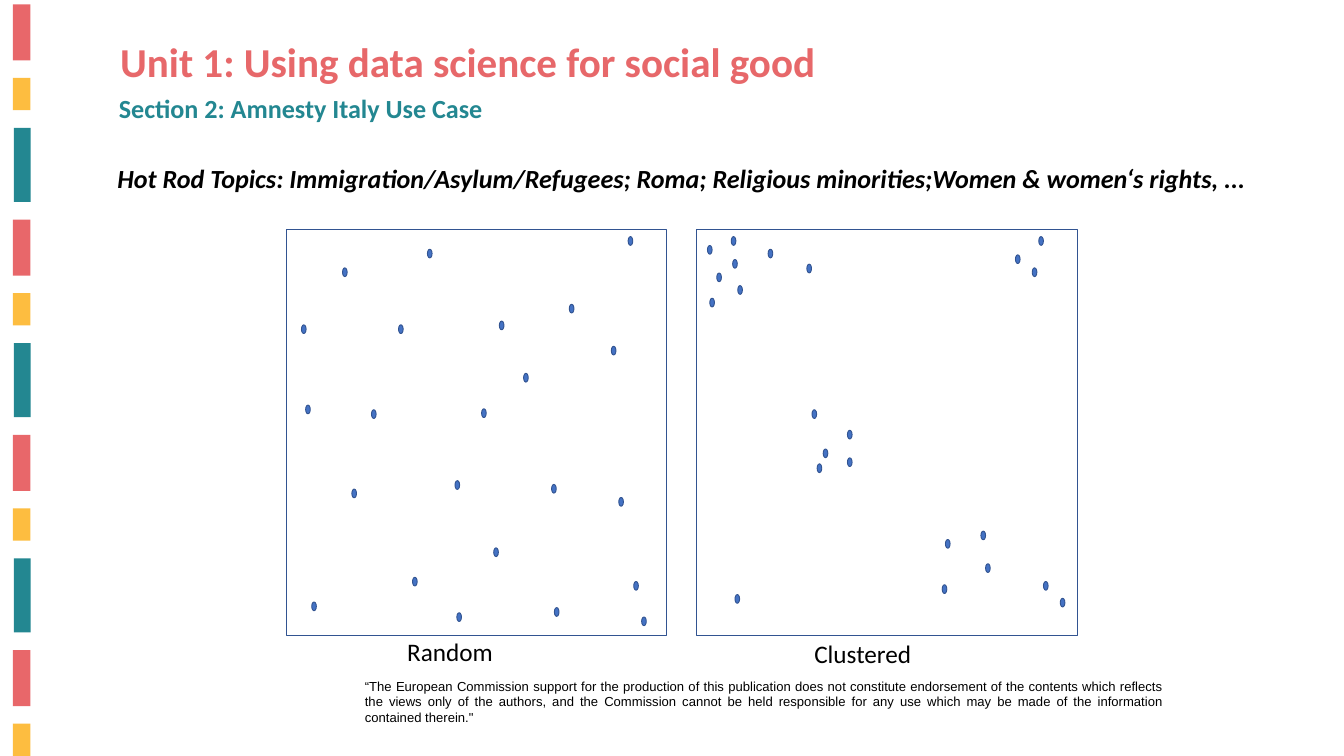
from pptx import Presentation
from pptx.dml.color import RGBColor
from pptx.enum.shapes import MSO_SHAPE as Shape
from pptx.enum.text import MSO_AUTO_SIZE as AutoSize, PP_ALIGN as Align
from pptx.util import Pt

CORAL = RGBColor(0xE8, 0x67, 0x6A)
TITLE_CORAL = RGBColor(0xE7, 0x68, 0x6A)
YELLOW = RGBColor(0xFD, 0xBD, 0x40)
TEAL = RGBColor(0x23, 0x87, 0x91)
BLUE = RGBColor(0x44, 0x72, 0xC4)
NAVY = RGBColor(0x32, 0x54, 0x91)
BLACK = RGBColor(0, 0, 0)

STRIPE_PERIOD = 230.6
STRIPE_COUNT = 11
STRIPES = [(13.8, 4.8, 18.7, 60, CORAL),
           (13.8, 83.6, 18.7, 34.4, YELLOW),
           (14.8, 137, 18.2, 79.4, TEAL)]

RANDOM_DOTS = [
    (323, 348), (458, 267), (367, 287), (377, 524), (398, 439), (610, 326),
    (427, 348), (442, 618.5), (327.5, 434), (594, 651), (516, 438), (561, 400),
    (487.5, 515), (535, 344), (489.5, 656.5), (591, 519), (655, 371), (529, 587),
    (673, 253.5), (334, 645), (679, 623), (687.5, 661), (663, 533)]
CLUSTERED_DOTS = [
    (758, 263), (783.5, 253.5), (768, 292.5), (785, 278), (823, 267), (790.5, 306),
    (864.5, 283), (760.5, 319.5), (875.5, 497), (882, 481), (908, 490.5), (908, 461),
    (870, 439), (1088, 273), (1106, 287), (1009.5, 626.5), (1013, 578), (1056, 604),
    (1113, 253.5), (1051, 569), (1118, 623), (1136, 641), (787.5, 637)]

DISCLAIMER = (
    "“The European Commission support for the production of this publication does not "
    "constitute endorsement of the contents which reflects the views only of the authors, "
    "and the Commission cannot be held responsible for any use which may be made of the "
    "information contained therein.\"")


class SlideWriter:
    font = "Calibri"
    outline = NAVY
    dot_size = (5, 9.4)

    def __init__(self, slide):
        self.slide = slide

    def shape(self, kind, left, top, width, height, fill=None, line=None):
        item = self.slide.shapes.add_shape(kind, Pt(left), Pt(top), Pt(width), Pt(height))
        item.shadow.inherit = False
        if fill is None:
            item.fill.background()
        else:
            item.fill.solid()
            item.fill.fore_color.rgb = fill
        if line is None:
            item.line.fill.background()
        else:
            item.line.color.rgb = line
            item.line.width = Pt(1)

    def stripe(self, left, top, width, height, color):
        self.shape(Shape.RECTANGLE, left, top, width, height, color)

    def dot(self, left, top):
        self.shape(Shape.OVAL, left, top, *self.dot_size, BLUE, self.outline)

    def frame(self, left, top, width, height):
        self.shape(Shape.RECTANGLE, left, top, width, height, line=self.outline)

    def text(self, words, left, top, width, height, size, color=BLACK,
             bold=False, italic=False, font=None, align=Align.LEFT):
        box = self.slide.shapes.add_textbox(Pt(left), Pt(top), Pt(width), Pt(height))
        body = box.text_frame
        body.word_wrap = True
        body.auto_size = AutoSize.SHAPE_TO_FIT_TEXT
        paragraph = body.paragraphs[0]
        paragraph.alignment = align
        run = paragraph.add_run()
        run.text = words
        run.font.name = font or self.font
        run.font.size = Pt(size)
        run.font.color.rgb = color
        run.font.bold = bold
        run.font.italic = italic


def main():
    deck = Presentation()
    deck.slide_width, deck.slide_height = Pt(1440), Pt(810)
    writer = SlideWriter(deck.slides.add_slide(deck.slide_layouts[6]))

    for index in range(STRIPE_COUNT):
        cycle, position = divmod(index, len(STRIPES))
        left, top, width, height, color = STRIPES[position]
        writer.stripe(left, top + cycle * STRIPE_PERIOD, width, height, color)

    writer.text(DISCLAIMER, 383.8, 722.9, 869.8, 58.3, 14, font="Arial", align=Align.JUSTIFY)

    for left, top in RANDOM_DOTS + CLUSTERED_DOTS:
        writer.dot(left, top)
    for left in (306.7, 746.6):
        writer.frame(left, 246.2, 407.5, 434.2)

    writer.text("Clustered", 865.4, 680.4, 228.2, 40.3, 27)
    writer.text("Random", 429.1, 678.2, 228.2, 40.3, 27)
    writer.text("Hot Rod Topics: Immigration/Asylum/Refugees; Roma; Religious minorities;"
                "Women & women‘s rights, ...",
                118.8, 170.6, 1229.8, 41, 28, bold=True, italic=True)
    writer.text("Unit 1: Using data science for social good",
                121.7, 36, 779.8, 60.5, 44, TITLE_CORAL, bold=True)
    writer.text("Section 2: Amnesty Italy Use Case",
                120.2, 95.8, 790.6, 41, 28, TEAL, bold=True)

    deck.save("out.pptx")


if __name__ == "__main__":
    main()
